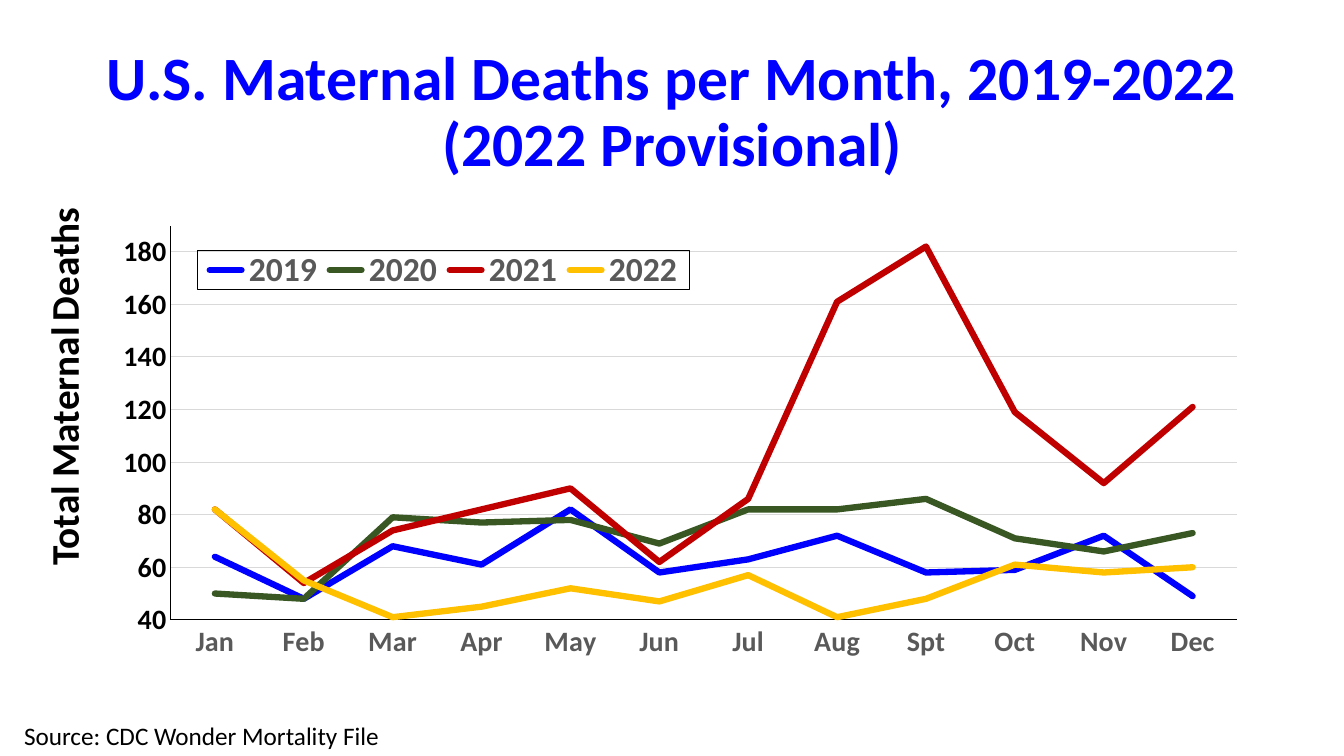
from lxml import etree
from pptx import Presentation
from pptx.chart.data import CategoryChartData
from pptx.dml.color import RGBColor
from pptx.enum.chart import XL_CHART_TYPE as CT, XL_LEGEND_POSITION as LP
from pptx.enum.chart import XL_MARKER_STYLE as MS, XL_TICK_MARK as TM
from pptx.enum.text import MSO_ANCHOR, PP_ALIGN
from pptx.oxml import parse_xml
from pptx.oxml.ns import nsdecls, qn
from pptx.util import Inches, Pt

FONT = "Calibri"
COLORS = {"title": "0000FF", "text": "000000", "label": "595959", "grid": "D9D9D9",
          "2019": "0000FF", "2020": "385723", "2021": "C00000", "2022": "FFC000"}
MONTHS = ["Jan", "Feb", "Mar", "Apr", "May", "Jun",
          "Jul", "Aug", "Spt", "Oct", "Nov", "Dec"]
DEATHS = {"2019": [64, 48, 68, 61, 82, 58, 63, 72, 58, 59, 72, 49],
          "2020": [50, 48, 79, 77, 78, 69, 82, 82, 86, 71, 66, 73],
          "2021": [82, 54, 74, 82, 90, 62, 86, 161, 182, 119, 92, 121],
          "2022": [82, 55, 41, 45, 52, 47, 57, 41, 48, 61, 58, 60]}


def rgb(name):
    """Return the named palette colour."""
    return RGBColor.from_string(COLORS[name])


def style_font(font, size, color="text", bold=True):
    """Apply the slide font with a size, colour and weight."""
    font.name, font.size, font.bold = FONT, Pt(size), bold
    font.color.rgb = rgb(color)


def style_line(line, color, width=0.75):
    """Give a line a solid colour and a width in points."""
    line.color.rgb, line.width = rgb(color), Pt(width)


def add_text(s, box, text, size, color="text", bold=True):
    """Add a one-paragraph text box and return it with its paragraph."""
    sp = s.shapes.add_textbox(*map(Inches, box))
    tf = sp.text_frame
    tf.word_wrap = True
    p = tf.paragraphs[0]
    p.text = text
    style_font(p.font, size, color, bold)
    return sp, p


def add_title(s, box):
    """Add the centred slide title."""
    sp, p = add_text(s, box, "U.S. Maternal Deaths per Month, 2019-2022 (2022 Provisional)",
                     44, "title")
    sp.text_frame.vertical_anchor = MSO_ANCHOR.MIDDLE
    p.alignment, p.line_spacing = PP_ALIGN.CENTER, 0.9


def set_layout(parent, index, box, inner=False):
    """Place a chart part by fractions of the chart area."""
    for old in parent.findall(qn("c:layout")):
        parent.remove(old)
    layout = parse_xml(f"<c:layout {nsdecls('c')}><c:manualLayout/></c:layout>")
    values = [("layoutTarget", "inner")] if inner else []
    values += [("xMode", "edge"), ("yMode", "edge"), *zip("xywh", box)]
    for tag, val in values:
        etree.SubElement(layout[0], qn(f"c:{tag}")).set("val", str(val))
    parent.insert(index, layout)


def style_axis(axis, color):
    """Style an axis line and its labels."""
    axis.major_tick_mark = axis.minor_tick_mark = TM.NONE
    style_font(axis.tick_labels.font, 20, color)
    style_line(axis.format.line, "text")


def add_legend(chart, box):
    """Add the outlined legend inside the plot."""
    chart.has_legend = True
    legend = chart.legend
    legend.position, legend.include_in_layout = LP.BOTTOM, True
    style_font(legend.font, 24, "label")
    el = legend._element
    set_layout(el, 1, box)
    el.find(qn("c:overlay")).addnext(parse_xml(
        f"<c:spPr {nsdecls('c', 'a')}><a:ln w='9525'><a:solidFill>"
        f"<a:srgbClr val='{COLORS['text']}'/></a:solidFill></a:ln></c:spPr>"))


def add_deaths_chart(s, box):
    """Add the monthly line chart with one line per year."""
    data = CategoryChartData()
    data.categories = MONTHS
    for year, deaths in DEATHS.items():
        data.add_series(year, deaths)
    chart = s.shapes.add_chart(CT.LINE, *map(Inches, box), data).chart
    chart.has_title = False
    style_font(chart.font, 10, bold=False)
    chart.plots[0].vary_by_categories = False
    for series in chart.plots[0].series:
        series.smooth = False
        series.marker.style = MS.NONE
        style_line(series.format.line, series.name, 4.5)
        series._element.find(f"{qn('c:spPr')}/{qn('a:ln')}").set("cap", "rnd")
    style_axis(chart.category_axis, "label")
    axis = chart.value_axis
    style_axis(axis, "text")
    axis.minimum_scale, axis.maximum_scale, axis.major_unit = 40, 190, 20
    style_line(axis.major_gridlines.format.line, "grid")
    set_layout(chart._chartSpace.chart.plotArea, 0, (0.067, 0.05, 0.92, 0.822), inner=True)
    add_legend(chart, (0.09, 0.1, 0.425, 0.08))


def add_axis_caption(s, box):
    """Add the vertical caption beside the value axis."""
    sp, p = add_text(s, box, "Total Maternal", 28)
    sp.rotation = 270
    for text, size in ((" ", 20), ("Deaths", 28)):
        r = p.add_run()
        r.text, r.font.size = text, Pt(size)


def add_source(s, box):
    """Add the source line."""
    add_text(s, box, "Source: CDC Wonder Mortality File", 18, bold=False)


def main():
    """Build and save the slide."""
    prs = Presentation()
    prs.slide_width, prs.slide_height = Inches(13.33), Inches(7.5)
    s = prs.slides.add_slide(prs.slide_layouts[6])
    add_title(s, (0.92, 0.4, 11.5, 1.45))
    add_deaths_chart(s, (0.92, 2, 11.5, 4.76))
    add_axis_caption(s, (-1.52, 3.27, 4.3, 0.57))
    add_source(s, (0.14, 7.1, 4.13, 0.4))
    prs.save("out.pptx")


if __name__ == "__main__":
    main()
